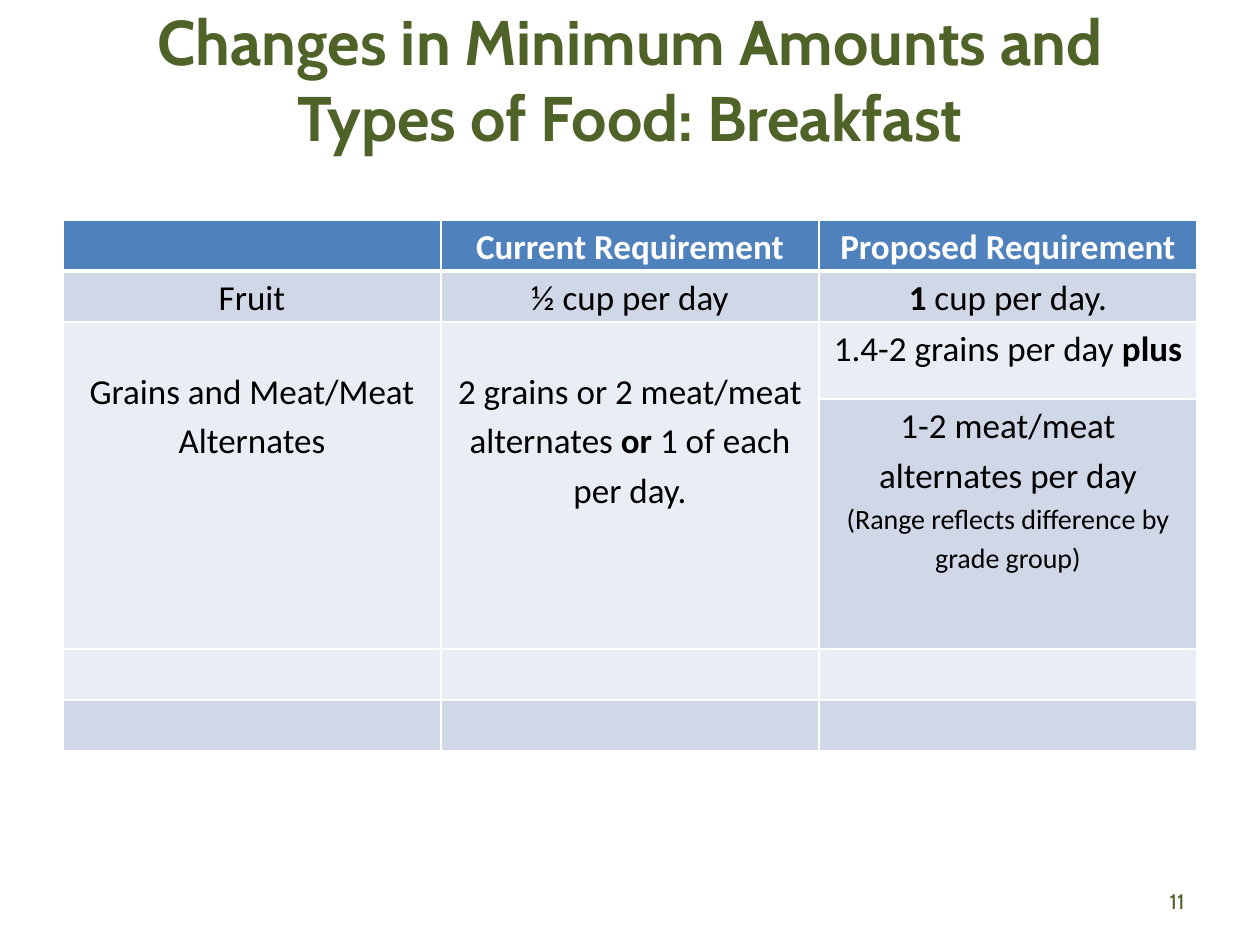
from dataclasses import dataclass

from lxml.etree import SubElement
from pptx import Presentation
from pptx.dml.color import RGBColor
from pptx.enum.text import MSO_ANCHOR, MSO_AUTO_SIZE, PP_ALIGN
from pptx.oxml.ns import qn
from pptx.util import Emu, Pt


@dataclass(frozen=True)
class Theme:
    heading_font: str = "Cabin"
    body_font: str = "Calibri"
    green: str = "4F6228"
    header_fill: str = "4F81BD"
    dark_band: str = "D0D8E8"
    light_band: str = "E9EDF4"
    white: str = "FFFFFF"
    black: str = "000000"
    title_size: int = 36
    body_size: int = 20
    note_size: int = 16
    number_size: int = 12
    line_spacing: float = 1.15
    thin_border: int = 1
    thick_border: int = 3


THEME = Theme()
PIXELS_PER_INCH = 126
COLUMN_WIDTH = 378
ROW_HEIGHTS = [51, 51, 77, 250, 51, 51]
GRAINS_ROW = 2

# Each cell is a list of paragraphs; each paragraph is a list of spans.
# A span in a tuple is bold.
ROWS = [
    [[], [["Current Requirement"]], [["Proposed Requirement"]]],
    [[["Fruit"]], [["½ cup per day"]], [[("1",), " cup per day."]]],
    [
        [["Grains and Meat/Meat Alternates"]],
        [["2 grains or 2 meat/meat alternates ", ("or",), " 1 of each per day."]],
        [["1.4-2 grains per day ", ("plus",)]],
    ],
    [
        [], [],
        [["1-2 meat/meat alternates per day"],
         ["(Range reflects difference by grade group)"]],
    ],
    [[], [], []],
    [[], [], []],
]


def px(count):
    return Emu(round(count * 914400 / PIXELS_PER_INCH))


def set_font(font, name, size, color, bold=False):
    font.name = name
    font.size = Pt(size)
    font.bold = bold
    font.color.rgb = RGBColor.from_string(color)


def place(shape, left, top, width, height):
    shape.left, shape.top = px(left), px(top)
    shape.width, shape.height = px(width), px(height)


def add_title(page, text):
    title = page.shapes.title
    place(title, 63, 38, 1134, 157)
    frame = title.text_frame
    frame.text = text
    frame.word_wrap = True
    frame.auto_size = MSO_AUTO_SIZE.NONE
    frame.vertical_anchor = MSO_ANCHOR.MIDDLE
    frame.margin_top, frame.margin_bottom = px(6), px(82)
    para = frame.paragraphs[0]
    para.alignment = PP_ALIGN.CENTER
    set_font(para.font, THEME.heading_font, THEME.title_size, THEME.green, True)


def add_page_number(page, number):
    box = page.shapes.add_textbox(px(903), px(876), px(294), px(50))
    frame = box.text_frame
    frame.word_wrap = True
    frame.vertical_anchor = MSO_ANCHOR.MIDDLE
    para = frame.paragraphs[0]
    para.text = number
    para.alignment = PP_ALIGN.RIGHT
    set_font(para.font, THEME.heading_font, THEME.number_size, THEME.green)


def set_borders(cell, row):
    properties = cell._tc.get_or_add_tcPr()
    widths = {"L": THEME.thin_border, "R": THEME.thin_border,
              "T": THEME.thick_border if row == 1 else THEME.thin_border,
              "B": THEME.thick_border if row == 0 else THEME.thin_border}
    for position, (side, width) in enumerate(widths.items()):
        line = SubElement(properties, qn(f"a:ln{side}"), w=str(Pt(width)))
        fill = SubElement(line, qn("a:solidFill"))
        SubElement(fill, qn("a:srgbClr"), val=THEME.white)
        properties.insert(position, line)


def fill_cell(cell, row, paragraphs):
    band = THEME.dark_band if row % 2 else THEME.light_band
    cell.fill.solid()
    cell.fill.fore_color.rgb = RGBColor.from_string(THEME.header_fill if row == 0 else band)
    cell.margin_left = cell.margin_right = px(9)
    cell.margin_top = cell.margin_bottom = 0
    set_borders(cell, row)

    for index, spans in enumerate(paragraphs):
        frame = cell.text_frame
        para = frame.add_paragraph() if index else frame.paragraphs[0]
        para.alignment = PP_ALIGN.CENTER
        para.line_spacing = THEME.line_spacing
        size = THEME.note_size if index else THEME.body_size
        color = THEME.white if row == 0 else THEME.black
        set_font(para.font, THEME.body_font, size, color, row == 0)
        for content in spans:
            span = para.add_run()
            if isinstance(content, tuple):
                span.text = content[0]
                span.font.bold = True
            else:
                span.text = content


def add_requirements_table(page):
    columns = len(ROWS[0])
    frame = page.shapes.add_table(len(ROWS), columns, px(63), px(220),
                                  px(COLUMN_WIDTH * columns), px(sum(ROW_HEIGHTS)))
    table = frame.table
    for column in table.columns:
        column.width = px(COLUMN_WIDTH)
    for row, height in zip(table.rows, ROW_HEIGHTS):
        row.height = px(height)
    for row, cells in enumerate(ROWS):
        for column, paragraphs in enumerate(cells):
            fill_cell(table.cell(row, column), row, paragraphs)

    # The first two columns span both grain and meat rows
    for column in range(2):
        cell = table.cell(GRAINS_ROW, column)
        cell.merge(table.cell(GRAINS_ROW + 1, column))
        cell.margin_top = px(43)


def main():
    deck = Presentation()
    deck.slide_width, deck.slide_height = px(1260), px(945)
    page = deck.slides.add_slide(deck.slide_layouts[5])
    add_title(page, "Changes in Minimum Amounts and Types of Food: Breakfast")
    add_requirements_table(page)
    add_page_number(page, "11")
    deck.save("out.pptx")


if __name__ == "__main__":
    main()
